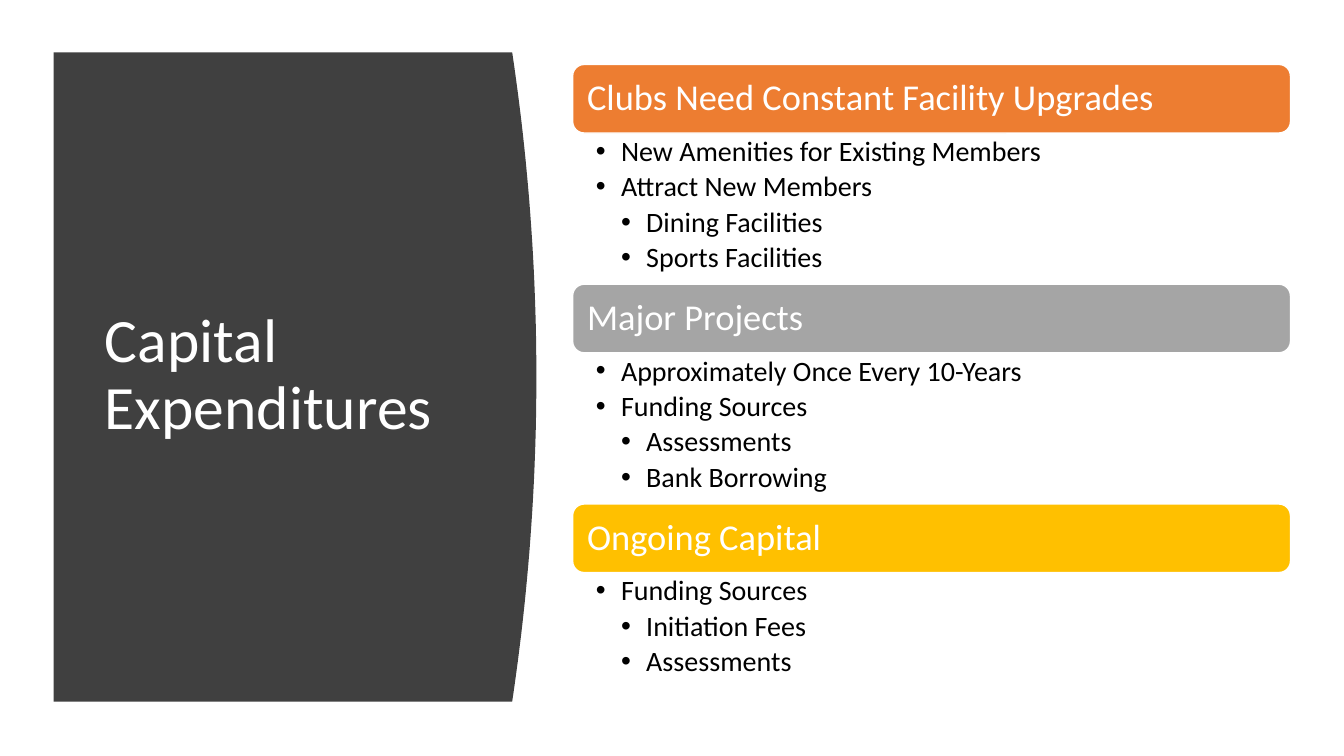
from dataclasses import dataclass

from lxml.etree import SubElement
from pptx import Presentation
from pptx.dml.color import RGBColor
from pptx.enum.shapes import MSO_SHAPE
from pptx.enum.text import MSO_ANCHOR, MSO_AUTO_SIZE, PP_ALIGN
from pptx.oxml.ns import qn
from pptx.util import Inches, Pt


@dataclass(frozen=True)
class Theme:
    font: str = "Calibri"
    white: str = "FFFFFF"
    black: str = "000000"
    dark: str = "404040"
    bars: tuple = ("ED7D31", "A5A5A5", "FFC000")
    title: int = 44
    head: int = 26
    body: int = 20
    lead: float = 0.9
    gap: float = 3.7


class Deck:
    """Holds the style and slide; lengths are percent of the slide's size."""

    def __init__(self, theme):
        self.theme = theme
        self.show = Presentation()
        self.show.slide_width = Inches(13.33)
        self.show.slide_height = Inches(7.5)
        self.slide = self.show.slides.add_slide(self.show.slide_layouts[5])

    def across(self, share):
        return round(self.show.slide_width * share / 100)

    def down(self, share):
        return round(self.show.slide_height * share / 100)

    def box(self, left, top, width, height):
        return (self.across(left), self.down(top),
                self.across(width), self.down(height))

    def paint(self, shape, fill):
        shape.shadow.inherit = False
        shape.fill.solid()
        shape.fill.fore_color.rgb = RGBColor.from_string(fill)

    def style(self, para, size, color):
        para.alignment = PP_ALIGN.LEFT
        para.line_spacing = self.theme.lead
        for run in para.runs:
            run.font.name = self.theme.font
            run.font.size = Pt(size)
            run.font.color.rgb = RGBColor.from_string(color)

    def frame(self, shape, anchor, pads):
        text = shape.text_frame
        text.word_wrap = True
        text.auto_size = MSO_AUTO_SIZE.NONE
        text.vertical_anchor = anchor
        (text.margin_left, text.margin_top,
         text.margin_right, text.margin_bottom) = map(Inches, pads)
        return text

    def title(self, words, *place):
        shape = self.slide.shapes.title
        shape.left, shape.top, shape.width, shape.height = self.box(*place)
        text = self.frame(shape, MSO_ANCHOR.MIDDLE, (0.1, 0.05, 0.1, 0.05))
        text.text = words
        self.style(text.paragraphs[0], self.theme.title, self.theme.white)

    def panel(self, left, top, width, height, bulge, steps=48):
        """A block whose right edge bows out as a parabola."""
        edge = []
        for step in range(steps + 1):
            turn = 2 * step / steps - 1
            side = left + width + bulge * (1 - turn ** 2)
            edge.append((self.across(side),
                         self.down(top + height * step / steps)))
        base = (self.across(left), self.down(top + height))
        pen = self.slide.shapes.build_freeform(self.across(left), self.down(top))
        pen.add_line_segments(edge + [base], close=True)
        shape = pen.convert_to_shape()
        self.paint(shape, self.theme.dark)
        shape.line.fill.background()
        # Send the panel behind the title
        self.slide.shapes.title._element.addprevious(shape._element)

    def bar(self, words, fill, *place):
        shape = self.slide.shapes.add_shape(
            MSO_SHAPE.ROUNDED_RECTANGLE, *self.box(*place))
        self.paint(shape, fill)
        shape.line.color.rgb = RGBColor.from_string(self.theme.white)
        shape.line.width = Pt(1)
        text = self.frame(shape, MSO_ANCHOR.MIDDLE, (0.11,) * 4)
        text.text = words
        self.style(text.paragraphs[0], self.theme.head, self.theme.white)

    def list(self, items, *place):
        shape = self.slide.shapes.add_textbox(*self.box(*place))
        text = self.frame(shape, MSO_ANCHOR.TOP, (0.23, 0.04, 0.2, 0.04))
        text.text = "\n".join(words for level, words in items)
        for para, (level, words) in zip(text.paragraphs, items):
            para.level = level
            self.style(para, self.theme.body, self.theme.black)
            para.space_after = Pt(self.theme.gap)
            props = para._p.get_or_add_pPr()
            props.set("marL", str(Inches(0.25 * level)))
            props.set("indent", str(Inches(-0.25)))
            SubElement(props, qn("a:buFont")).set("typeface", "Arial")
            SubElement(props, qn("a:buChar")).set("char", "•")


GROUPS = [
    ("Clubs Need Constant Facility Upgrades", [
        (1, "New Amenities for Existing Members"),
        (1, "Attract New Members"),
        (2, "Dining Facilities"),
        (2, "Sports Facilities")]),
    ("Major Projects", [
        (1, "Approximately Once Every 10-Years"),
        (1, "Funding Sources"),
        (2, "Assessments"),
        (2, "Bank Borrowing")]),
    ("Ongoing Capital", [
        (1, "Funding Sources"),
        (2, "Initiation Fees"),
        (2, "Assessments")]),
]


def main():
    theme = Theme()
    deck = Deck(theme)

    # Title on the dark panel
    deck.title("Capital Expenditures", 7.05, 14.8, 28.06, 69.87)
    deck.panel(3.98, 6.93, 34.13, 85.87, 1.8)

    # Three headed lists, evenly stacked
    left, top, width, head, pitch = 42.61, 8.53, 53.41, 9.07, 29.07
    for row, ((words, items), fill) in enumerate(zip(GROUPS, theme.bars)):
        start = top + row * pitch
        deck.bar(words, fill, left, start, width, head)
        deck.list(items, left, start + head, width, 5 * len(items))

    deck.show.save("out.pptx")


if __name__ == "__main__":
    main()
